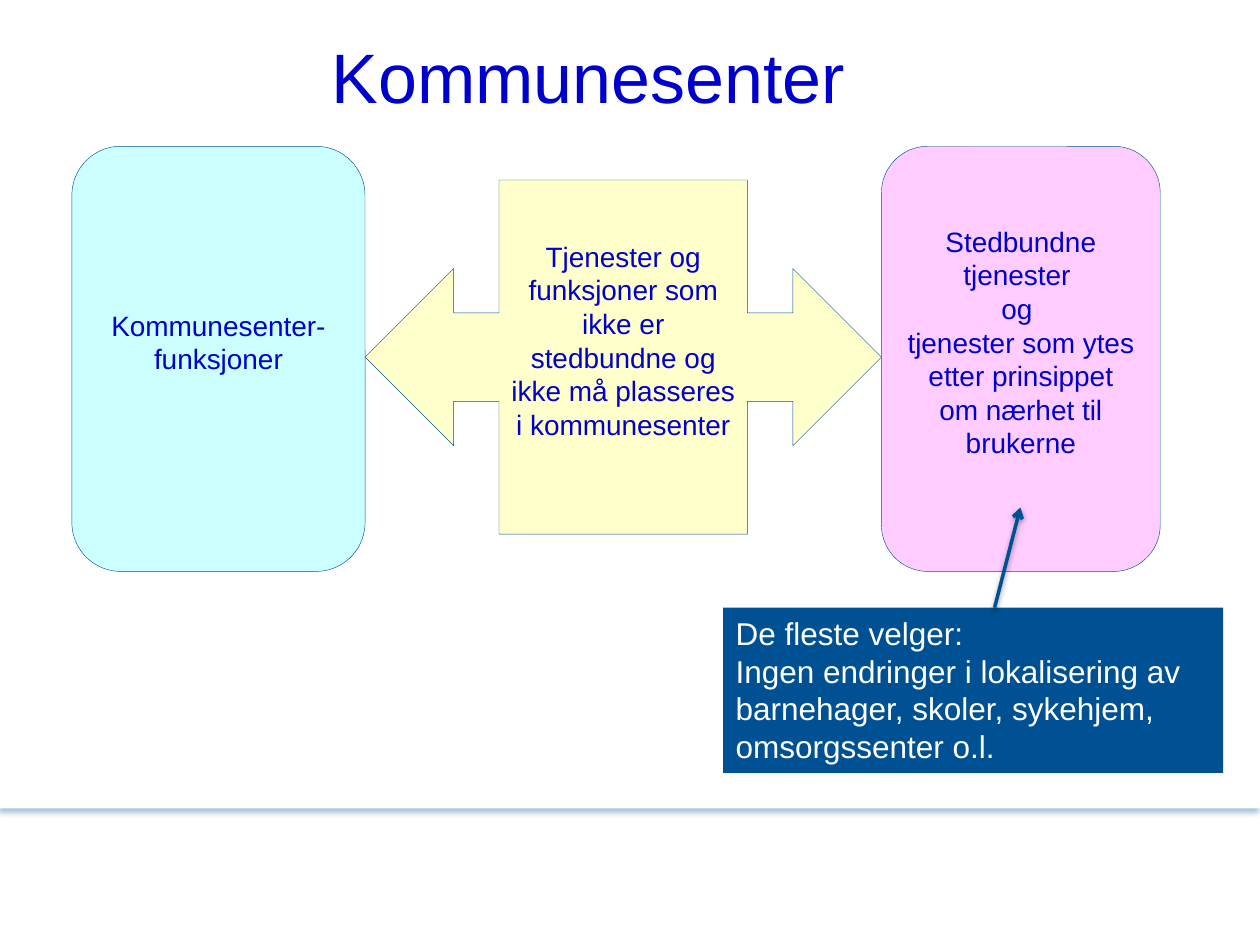
from dataclasses import dataclass

from lxml import etree
from pptx import Presentation
from pptx.dml.color import RGBColor
from pptx.enum import shapes as s, text as t
from pptx.oxml.ns import qn
from pptx.util import Cm, Pt


@dataclass(frozen=True)
class Theme:
    font: str = "Arial"
    ink: str = "0000CC"
    navy: str = "005193"
    white: str = "FFFFFF"
    black: str = "000000"
    aqua: str = "CCFFFF"
    cream: str = "FFFFCC"
    pink: str = "FFCCFF"
    title: int = 40
    note: int = 18
    body: int = 16


@dataclass(frozen=True)
class Box:
    """A region in centimetres."""
    x: float
    y: float
    w: float
    h: float

    def sub(self, x, y, w, h):
        return Box(self.x + x, self.y + y, w, h)

    def emu(self):
        return [Cm(n) for n in (self.x, self.y, self.w, self.h)]


T = Theme()
RISE = 0.81  # extra bottom inset that lifts centred text by half a line
SIDE = 0.23  # left and right inset of the chart texts


def rgb(code):
    return RGBColor.from_string(code)


def write(frame, lines, size, color, align, anchor):
    frame.word_wrap = True
    frame.auto_size = t.MSO_AUTO_SIZE.NONE
    frame.vertical_anchor = anchor
    for i, line in enumerate(lines):
        para = frame.paragraphs[0] if i == 0 else frame.add_paragraph()
        para.alignment = align
        run = para.add_run()
        run.text = line
        run.font.name = T.font
        run.font.size = Pt(size)
        run.font.color.rgb = rgb(color)


def block(slide, kind, box, fill, edge=None):
    """Add a plain filled shape, with a hairline if an edge colour is given."""
    shape = slide.shapes.add_shape(kind, *box.emu())
    shape.shadow.inherit = False
    shape.fill.solid()
    shape.fill.fore_color.rgb = rgb(fill)
    if edge:
        shape.line.color.rgb = rgb(edge)
        shape.line.width = Pt(0.25)
    else:
        shape.line.fill.background()
    return shape


def shade(shape, color, alpha, dist):
    """Give a shape a soft shadow that falls straight down."""
    props = shape._element.spPr
    effects = props.find(qn("a:effectLst"))
    if effects is None:
        effects = etree.SubElement(props, qn("a:effectLst"))
    outer = etree.SubElement(
        effects, qn("a:outerShdw"), blurRad=str(Pt(3.1)), dist=str(Pt(dist)),
        dir="5400000", algn="ctr", rotWithShape="0")
    tint = etree.SubElement(outer, qn("a:srgbClr"), val=color)
    etree.SubElement(tint, qn("a:alpha"), val=str(alpha * 1000))


def panel(slide, box):
    """Add the white page area, behind everything else."""
    shape = block(slide, s.MSO_SHAPE.RECTANGLE, box, T.white)
    shade(shape, T.navy, 35, 1.8)
    slide.shapes._spTree.insert(2, shape._element)


def head(slide, box):
    title = slide.shapes.title
    title.left, title.top, title.width, title.height = box.emu()
    write(title.text_frame, ["Kommunesenter"], T.title, T.ink,
          t.PP_ALIGN.LEFT, t.MSO_ANCHOR.TOP)


def chart(slide, box):
    """Add two rounded cards joined by a double arrow."""
    left, right = 5.91, 5.62
    gap = box.w - left - right
    card = s.MSO_SHAPE.ROUNDED_RECTANGLE
    parts = [
        (s.MSO_SHAPE.LEFT_RIGHT_ARROW_CALLOUT, T.cream,
         box.sub(left, 0.68, gap, 7.14),
         ["Tjenester og funksjoner som ikke er stedbundne og "
          "ikke må plasseres i kommunesenter"]),
        (card, T.aqua, box.sub(0, 0, left, box.h),
         ["Kommunesenter-funksjoner"]),
        (card, T.pink, box.sub(left + gap, 0, right, box.h),
         ["Stedbundne tjenester ", "og ",
          "tjenester som ytes etter prinsippet om nærhet til brukerne"]),
    ]
    for kind, fill, area, lines in parts:
        shape = block(slide, kind, area, fill, T.navy)
        frame = shape.text_frame
        frame.margin_left = frame.margin_right = Cm(SIDE)
        frame.margin_bottom = Cm(RISE)
        write(frame, lines, T.body, T.ink,
              t.PP_ALIGN.CENTER, t.MSO_ANCHOR.MIDDLE)


def note(slide, box):
    """Add the comment box and its arrow up to the right-hand card."""
    shape = block(slide, s.MSO_SHAPE.RECTANGLE, box, T.navy)
    write(shape.text_frame,
          ["De fleste velger:",
           "Ingen endringer i lokalisering av barnehager, skoler, "
           "sykehjem, omsorgssenter o.l."],
          T.note, T.white, t.PP_ALIGN.LEFT, t.MSO_ANCHOR.TOP)
    line = slide.shapes.add_connector(
        s.MSO_CONNECTOR.STRAIGHT, Cm(box.x + 5.47), Cm(box.y),
        Cm(box.x + 5.99), Cm(box.y - 2.02))
    line.line.color.rgb = rgb(T.navy)
    line.line.width = Pt(2)
    etree.SubElement(line.line._get_or_add_ln(), qn("a:tailEnd"), type="arrow")
    shade(line, T.black, 38, 1.6)


def main():
    deck = Presentation()
    deck.slide_width, deck.slide_height = Cm(25.4), Cm(19.05)
    slide = deck.slides.add_slide(deck.slide_layouts[5])
    panel(slide, Box(0, 0, 25.4, 16.3))
    head(slide, Box(6.43, 0.54, 13.13, 1.96))
    chart(slide, Box(1.45, 2.95, 21.94, 8.57))
    note(slide, Box(14.58, 12.25, 10.08, 3.33))
    deck.save("out.pptx")


if __name__ == "__main__":
    main()
